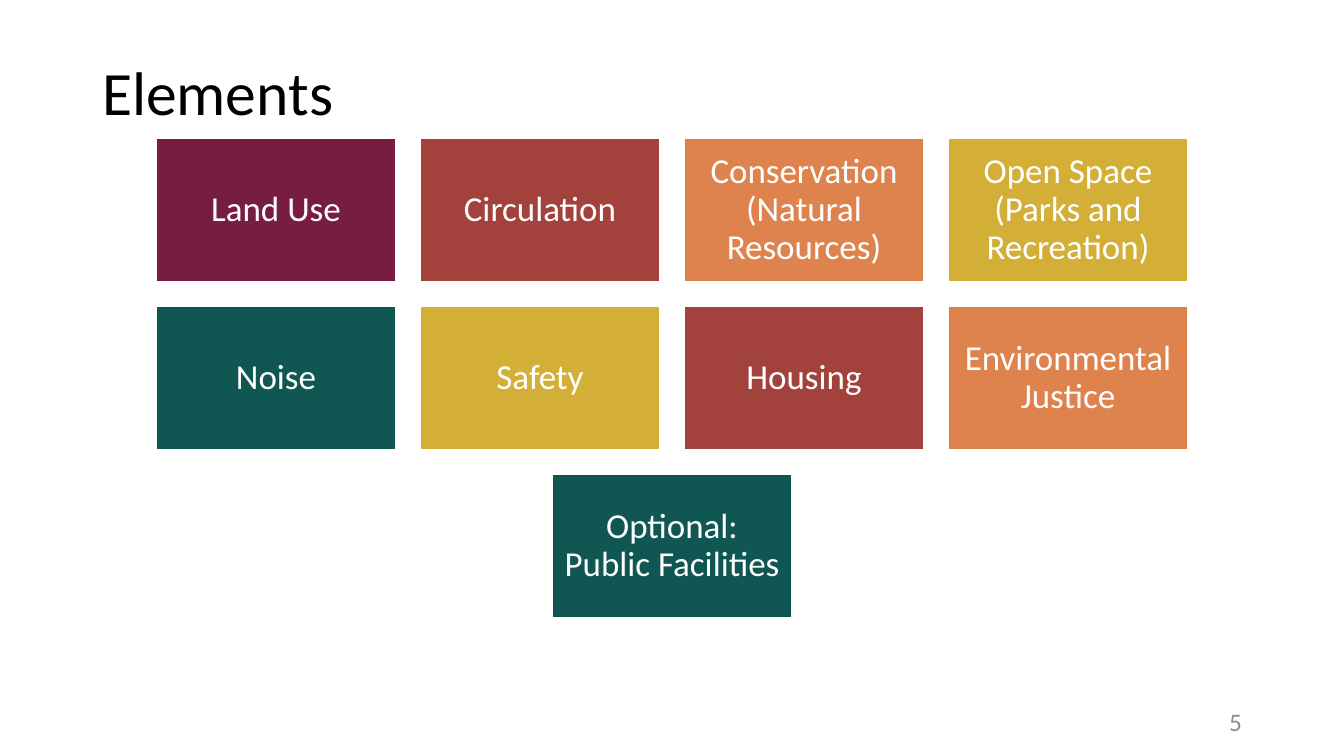
"""Build the slide that shows the plan elements as rows of coloured tiles."""
from dataclasses import dataclass

from pptx import Presentation
from pptx.dml.color import RGBColor
from pptx.enum.shapes import MSO_SHAPE
from pptx.enum.text import MSO_ANCHOR as Anchor, MSO_AUTO_SIZE as AutoSize, PP_ALIGN as Align
from pptx.util import Pt

SLIDE_WIDTH, SLIDE_HEIGHT = 1344, 756
EMU_PER_PX = 12192000 / SLIDE_WIDTH
TILE_WIDTH, TILE_HEIGHT, GAP = 240, 144, 24
TILES_TOP = 138
INSET = 10
FONT = "Calibri"
WHITE, BLACK, GREY = "FFFFFF", "000000", "8C8C8C"
PLUM, BRICK, ORANGE, GOLD, TEAL = "781D42", "A3423C", "DE834D", "D4AF37", "105652"


@dataclass(frozen=True)
class Tile:
    label: str
    fill: str


ROWS = [
    [
        Tile("Land Use", PLUM),
        Tile("Circulation", BRICK),
        Tile("Conservation (Natural Resources)", ORANGE),
        Tile("Open Space (Parks and Recreation)", GOLD),
    ],
    [
        Tile("Noise", TEAL),
        Tile("Safety", GOLD),
        Tile("Housing", BRICK),
        Tile("Environmental Justice", ORANGE),
    ],
    [Tile("Optional:\nPublic Facilities", TEAL)],
]


def px(length: int) -> int:
    return round(length * EMU_PER_PX)


def color(value: str) -> RGBColor:
    return RGBColor.from_string(value)


def place(shape, left: int, top: int, width: int, height: int) -> None:
    shape.left, shape.top = px(left), px(top)
    shape.width, shape.height = px(width), px(height)


def write(shape, text: str, size: int, ink: str, align: Align, spacing: float) -> None:
    frame = shape.text_frame
    frame.word_wrap = True
    frame.auto_size = AutoSize.NONE
    frame.vertical_anchor = Anchor.MIDDLE
    paragraph = frame.paragraphs[0]
    paragraph.alignment = align
    paragraph.line_spacing = spacing
    for index, line in enumerate(text.split("\n")):
        if index:
            paragraph.add_line_break()
        run = paragraph.add_run()
        run.text = line
        run.font.name = FONT
        run.font.size = Pt(size)
        run.font.color.rgb = color(ink)


def draw_tile(slide, tile: Tile, left: int, top: int) -> None:
    shape = slide.shapes.add_shape(
        MSO_SHAPE.RECTANGLE, px(left), px(top), px(TILE_WIDTH), px(TILE_HEIGHT)
    )
    shape.shadow.inherit = False
    shape.fill.solid()
    shape.fill.fore_color.rgb = color(tile.fill)
    shape.line.color.rgb = color(WHITE)
    shape.line.width = Pt(1)
    frame = shape.text_frame
    frame.margin_left = frame.margin_right = px(INSET)
    frame.margin_top = frame.margin_bottom = px(INSET)
    write(shape, tile.label, 25, WHITE, Align.CENTER, 0.9)


def draw_rows(slide, rows: list[list[Tile]]) -> None:
    for row_index, row in enumerate(rows):
        row_width = len(row) * (TILE_WIDTH + GAP) - GAP
        row_left = (SLIDE_WIDTH - row_width) // 2
        top = TILES_TOP + row_index * (TILE_HEIGHT + GAP)
        for column, tile in enumerate(row):
            draw_tile(slide, tile, row_left + column * (TILE_WIDTH + GAP), top)


def main() -> None:
    presentation = Presentation()
    presentation.slide_width, presentation.slide_height = px(SLIDE_WIDTH), px(SLIDE_HEIGHT)
    slide = presentation.slides.add_slide(presentation.slide_layouts[5])

    title = slide.shapes.title
    place(title, 92, 23, 1160, 146)
    write(title, "Elements", 44, BLACK, Align.LEFT, 0.9)

    page_number = slide.shapes.add_textbox(px(950), px(701), px(302), px(40))
    write(page_number, "5", 18, GREY, Align.RIGHT, 1.0)

    draw_rows(slide, ROWS)
    presentation.save("out.pptx")


if __name__ == "__main__":
    main()
